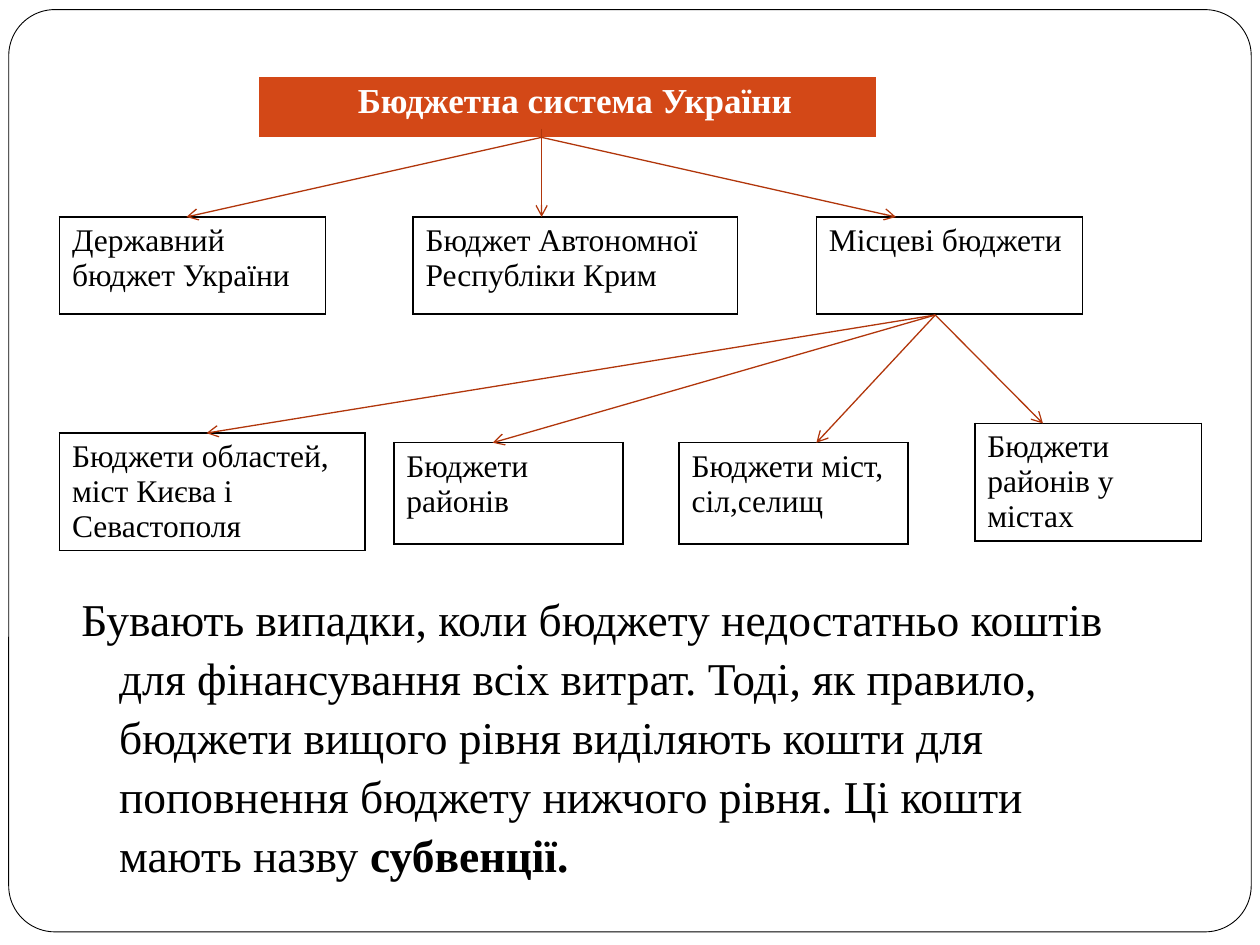
from dataclasses import dataclass

from lxml import etree
from pptx import Presentation
from pptx.dml.color import RGBColor
from pptx.enum.shapes import MSO_CONNECTOR, MSO_SHAPE
from pptx.oxml.ns import qn
from pptx.util import Pt

STRAIGHT = MSO_CONNECTOR.STRAIGHT
ROUNDED = MSO_SHAPE.ROUNDED_RECTANGLE


@dataclass(frozen=True)
class Theme:
    font: str = "Times New Roman"
    white: RGBColor = RGBColor(0xFF, 0xFF, 0xFF)
    ink: RGBColor = RGBColor(0, 0, 0)
    accent: RGBColor = RGBColor(0xD3, 0x48, 0x17)
    arrow: RGBColor = RGBColor(0xB1, 0x36, 0x0B)
    title: int = 20
    label: int = 18
    body: int = 26


class SlideBuilder:
    def __init__(self, slide, theme):
        self.s, self.theme = slide, theme

    def add_run(self, p, text, size, color, bold=False):
        r = p.add_run()
        r.text = text
        style = {"name": self.theme.font, "size": Pt(size), "bold": bold}
        for key, value in style.items():
            setattr(r.font, key, value)
        r.font.color.rgb = color

    def frame(self, left, top, width, height):
        sp = self.s.shapes.add_shape(ROUNDED, Pt(left), Pt(top), Pt(width), Pt(height))
        sp.adjustments[0] = 0.05
        sp.shadow.inherit = False
        sp.fill.solid()
        sp.fill.fore_color.rgb = self.theme.white
        sp.line.color.rgb = self.theme.ink
        sp.line.width = Pt(0.5)

    def one_cell_table(self, left, top, width, height):
        table = self.s.shapes.add_table(1, 1, Pt(left), Pt(top), Pt(width), Pt(height)).table
        table.first_row = table.horz_banding = False
        return table.cell(0, 0)

    def title(self, text, left, top, width, height, indent):
        cell = self.one_cell_table(left, top, width, height)
        cell.fill.solid()
        cell.fill.fore_color.rgb = self.theme.accent
        cell.margin_left = Pt(indent)
        self.add_run(cell.text_frame.paragraphs[0], text, self.theme.title,
                     self.theme.white, bold=True)

    def budget(self, text, left, top, width, height):
        """Outlined one-cell table naming one budget."""
        cell = self.one_cell_table(left, top, width, height)
        self.add_run(cell.text_frame.paragraphs[0], text, self.theme.label, self.theme.ink)
        props = cell._tc.get_or_add_tcPr()
        for side in ("a:lnL", "a:lnR", "a:lnT", "a:lnB"):
            ln = etree.SubElement(props, qn(side), w=str(Pt(1)))
            fill = etree.SubElement(ln, qn("a:solidFill"))
            etree.SubElement(fill, qn("a:srgbClr"), val=str(self.theme.ink))
        cell.fill.background()

    def arrow(self, start, end):
        points = [Pt(v) for v in (*start, *end)]
        line = self.s.shapes.add_connector(STRAIGHT, *points)
        line.line.color.rgb = self.theme.arrow
        line.line.width = Pt(0.75)
        etree.SubElement(line.line._get_or_add_ln(), qn("a:tailEnd"), type="arrow")
        etree.SubElement(line._element.spPr, qn("a:effectLst"))

    def body(self, parts, left, top, width, height, hanging):
        """Paragraph with a hanging indent, from (text, bold) parts."""
        tf = self.s.shapes.add_textbox(Pt(left), Pt(top), Pt(width), Pt(height)).text_frame
        tf.word_wrap = True
        p = tf.paragraphs[0]
        p.line_spacing = 1.08
        props = p._p.get_or_add_pPr()
        props.set("marL", str(Pt(hanging)))
        props.set("indent", str(-Pt(hanging)))
        for text, bold in parts:
            self.add_run(p, text, self.theme.body, self.theme.ink, bold)


LEVEL_TOP, LEVEL_HEIGHT = 124, 55.5
LOCAL_HEIGHT = 58

# text, left, width, arrow tip x
LEVELS = [
    ("Державний бюджет України", 34, 152, 106.5),
    ("Бюджет Автономної Республіки Крим", 236, 185.5, 309.5),
    ("Місцеві бюджети", 466.5, 152, 512),
]
# text, left, top, width, arrow tip x
LOCAL = [
    ("Бюджети областей, міст Києва і Севастополя", 34, 247.5, 174.5, 118),
    ("Бюджети районів", 225, 253, 131, 281.5),
    ("Бюджети міст, сіл,селищ", 388, 253, 131, 466.5),
    ("Бюджети районів у містах", 557, 242, 129.5, 596),
]
BODY = [
    ("Бувають випадки, коли бюджету недостатньо коштів для фінансування всіх "
     "витрат. Тоді, як правило, бюджети вищого рівня виділяють кошти для "
     "поповнення бюджету нижчого рівня. Ці кошти мають назву ", False),
    ("субвенції.", True),
]


def main():
    prs = Presentation()
    prs.slide_width, prs.slide_height = Pt(720), Pt(540)
    b = SlideBuilder(prs.slides.add_slide(prs.slide_layouts[6]), Theme())

    b.frame(5, 5.5, 710, 527)
    b.title("Бюджетна система України", 147.5, 43.5, 353.5, 35, indent=57)

    system_x, system_bottom = 309.5, 78.5
    for text, left, width, tip in LEVELS:
        b.budget(text, left, LEVEL_TOP, width, LEVEL_HEIGHT)
        start_y = 73.5 if tip == system_x else system_bottom
        b.arrow((system_x, start_y), (tip, LEVEL_TOP))

    local_start = (534.5, 180)
    for text, left, top, width, tip in LOCAL:
        b.budget(text, left, top, width, LOCAL_HEIGHT)
        b.arrow(local_start, (tip, top))

    b.body(BODY, 39.5, 332, 612, 186, hanging=21.5)
    prs.save("out.pptx")


if __name__ == "__main__":
    main()
